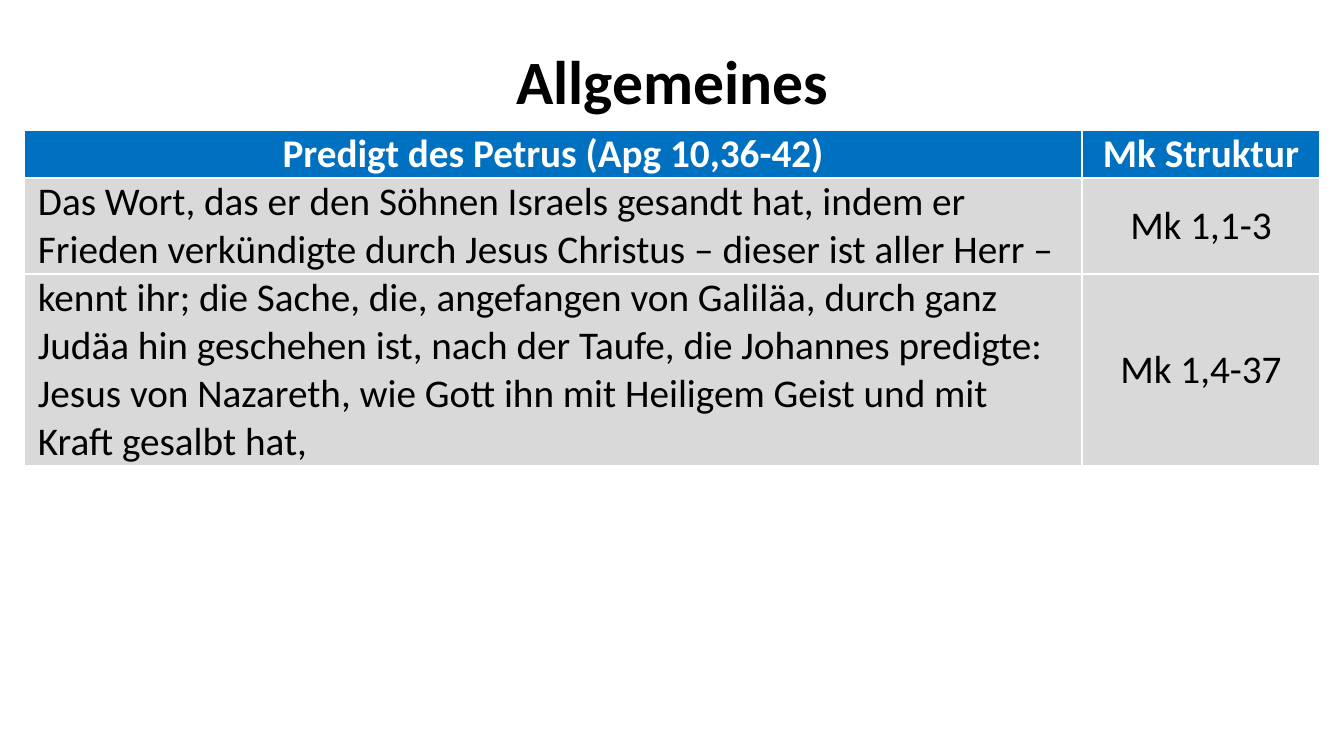
"""Build the slide comparing Peter's sermon with the structure of Mark."""
from pptx import Presentation, util as u
from pptx.dml.color import RGBColor
from pptx.enum import text as t

PX = 914400 / 100.8
BLACK = RGBColor(0, 0, 0)
WHITE = RGBColor(255, 255, 255)
BLUE = RGBColor(0, 112, 192)
GREY = RGBColor(217, 217, 217)

ROWS = [
    ("Predigt des Petrus (Apg 10,36-42)", "Mk Struktur"),
    ("Das Wort, das er den Söhnen Israels gesandt hat, indem er Frieden "
     "verkündigte durch Jesus Christus – dieser ist aller Herr –", "Mk 1,1-3"),
    ("kennt ihr; die Sache, die, angefangen von Galiläa, durch ganz Judäa hin "
     "geschehen ist, nach der Taufe, die Johannes predigte: Jesus von Nazareth, "
     "wie Gott ihn mit Heiligem Geist und mit Kraft gesalbt hat,", "Mk 1,4-37"),
]
WIDTHS = [1058, 238]
LINES = [1, 2, 4]
LINE = 48


def px(n):
    return u.Emu(round(n * PX))


def style(para, size, color, bold, align):
    para.alignment = align
    for run in para.runs:
        font = run.font
        font.name, font.size, font.bold = "Calibri", u.Pt(size), bold
        font.color.rgb = color


prs = Presentation()
prs.slide_width, prs.slide_height = px(1344), px(756)
slide = prs.slides.add_slide(prs.slide_layouts[6])

title = slide.shapes.add_textbox(px(93), px(40), px(1159), px(90)).text_frame
title.word_wrap = True
title.vertical_anchor = t.MSO_ANCHOR.MIDDLE
title.text = "Allgemeines"
title.paragraphs[0].line_spacing = 0.9
style(title.paragraphs[0], 44, BLACK, True, t.PP_ALIGN.CENTER)

table = slide.shapes.add_table(
    len(ROWS), len(WIDTHS), px(24), px(130), px(sum(WIDTHS)), px(LINE * sum(LINES))
).table
for col, width in zip(table.columns, WIDTHS):
    col.width = px(width)
for r, (row, lines) in enumerate(zip(ROWS, LINES)):
    table.rows[r].height = px(LINE * lines)
    head = r == 0
    for c, words in enumerate(row):
        cell = table.cell(r, c)
        cell.text = words
        cell.vertical_anchor = t.MSO_ANCHOR.MIDDLE
        cell.margin_left = cell.margin_right = px(14)
        cell.margin_top = cell.margin_bottom = 0
        cell.fill.solid()
        cell.fill.fore_color.rgb = BLUE if head else GREY
        align = t.PP_ALIGN.CENTER if head or c else t.PP_ALIGN.LEFT
        style(cell.text_frame.paragraphs[0], 28, WHITE if head else BLACK, head, align)

prs.save("out.pptx")
